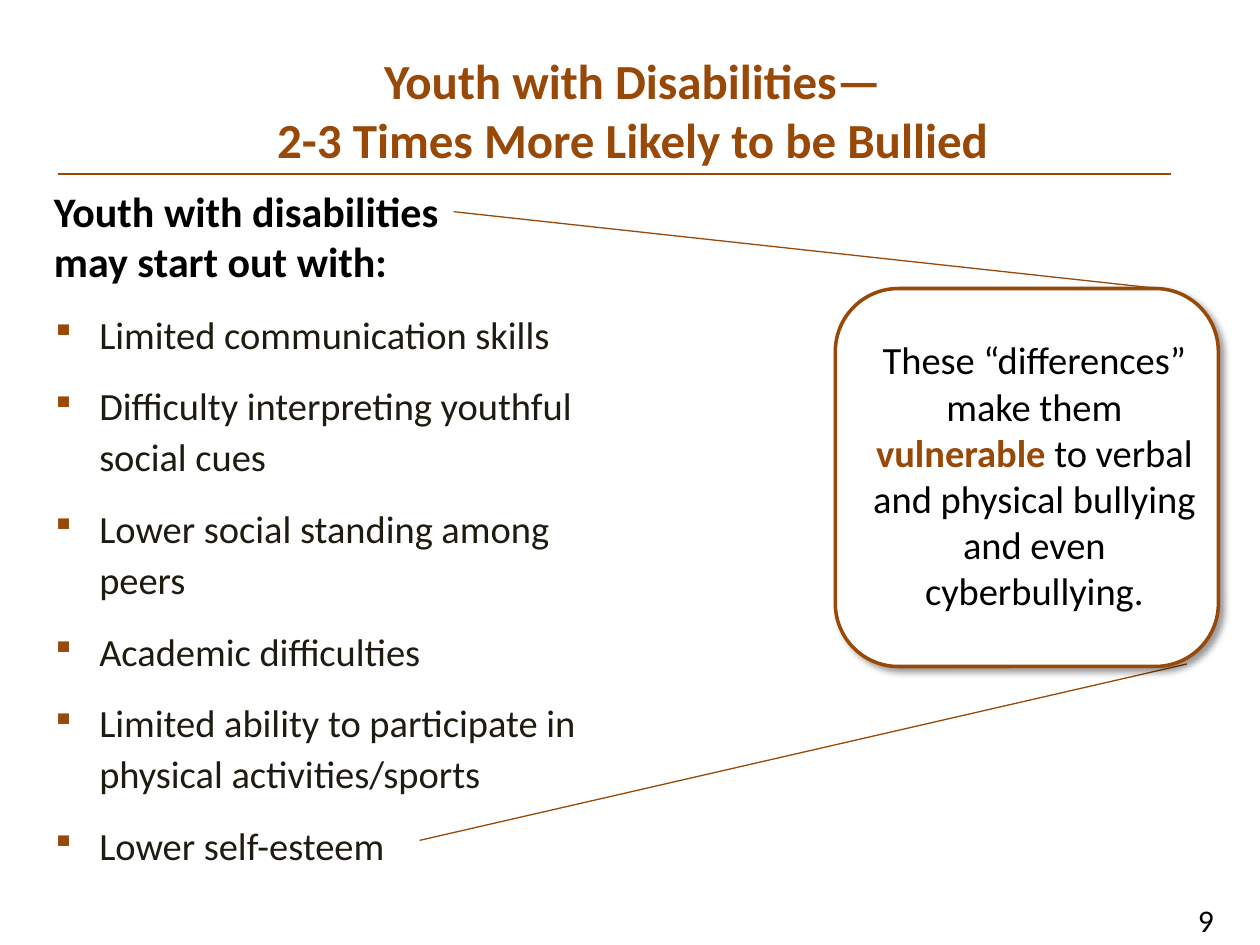
from dataclasses import dataclass

from lxml import etree
from pptx import Presentation
from pptx.dml.color import RGBColor
from pptx.enum.shapes import MSO_CONNECTOR, MSO_SHAPE
from pptx.enum.text import MSO_ANCHOR, PP_ALIGN
from pptx.oxml import parse_xml
from pptx.oxml.ns import nsdecls, qn
from pptx.util import Inches, Pt

LEFT, CENTER = PP_ALIGN.LEFT, PP_ALIGN.CENTER
TOP, MIDDLE = MSO_ANCHOR.TOP, MSO_ANCHOR.MIDDLE
ROUND = MSO_SHAPE.ROUNDED_RECTANGLE
STRAIGHT = MSO_CONNECTOR.STRAIGHT


@dataclass(frozen=True)
class Theme:
    font: str = "Calibri"
    brown: str = "984807"
    black: str = "000000"
    dark: str = "1E1C11"
    white: str = "FFFFFF"
    title: int = 28
    lead: int = 24
    body: int = 22
    number: int = 18


class Deck:
    def __init__(self, theme):
        self.theme = theme
        self.file = Presentation()
        self.file.slide_width = Inches(10)
        self.file.slide_height = Inches(7.5)
        self.slide = self.file.slides.add_slide(self.file.slide_layouts[6])

    def run(self, para, text, size, color, bold=False):
        run = para.add_run()
        run.text = text
        run.font.name = self.theme.font
        run.font.size = Pt(size)
        run.font.bold = bold
        run.font.color.rgb = RGBColor.from_string(color)

    def box(self, at, align=LEFT, anchor=TOP):
        frame = self.slide.shapes.add_textbox(*map(Inches, at)).text_frame
        frame.word_wrap = True
        frame.vertical_anchor = anchor
        frame.paragraphs[0].alignment = align
        return frame

    def text(self, at, runs, size, align=LEFT):
        para = self.box(at, align).paragraphs[0]
        for words, color, bold in runs:
            self.run(para, words, size, color, bold)

    def title(self, at, lines):
        para = self.box(at, CENTER, MIDDLE).paragraphs[0]
        for i, line in enumerate(lines):
            if i:
                para.add_line_break()
            self.run(para, line, self.theme.title, self.theme.brown, True)

    def bullet(self, para):
        props = para._p.get_or_add_pPr()
        props.set("marL", str(Inches(0.38)))
        props.set("indent", str(Inches(-0.38)))
        color = etree.SubElement(props, qn("a:buClr"))
        etree.SubElement(color, qn("a:srgbClr"), val=self.theme.brown)
        etree.SubElement(props, qn("a:buSzPct"), val="85000")
        etree.SubElement(props, qn("a:buChar"), char="▪")

    def bullets(self, at, items):
        frame = self.box(at)
        for i, item in enumerate(items):
            para = frame.add_paragraph() if i else frame.paragraphs[0]
            self.bullet(para)
            para.line_spacing = 1.1
            para.space_before = Pt(12 if i else 0)
            self.run(para, item, self.theme.body, self.theme.dark)

    def line(self, start, end, width):
        ends = map(Inches, (*start, *end))
        line = self.slide.shapes.add_connector(STRAIGHT, *ends)
        line.line.color.rgb = RGBColor.from_string(self.theme.brown)
        line.line.width = Pt(width)
        etree.SubElement(line._element.spPr, qn("a:effectLst"))

    def card(self, at):
        card = self.slide.shapes.add_shape(ROUND, *map(Inches, at))
        card.fill.solid()
        card.fill.fore_color.rgb = RGBColor.from_string(self.theme.white)
        card.line.color.rgb = RGBColor.from_string(self.theme.brown)
        card.line.width = Pt(2)
        card._element.spPr.append(parse_xml(
            f'<a:effectLst {nsdecls("a")}>'
            f'<a:outerShdw blurRad="{Pt(4)}" dist="{Pt(3)}" dir="2700000" '
            f'algn="tl" rotWithShape="0"><a:srgbClr val="{self.theme.black}">'
            '<a:alpha val="40000"/></a:srgbClr></a:outerShdw></a:effectLst>'))


def main():
    theme = Theme()
    deck = Deck(theme)
    deck.line((0.46, 1.38), (9.29, 1.38), 1.5)
    deck.bullets((0.31, 2.38, 4.6, 4.42), [
        "Limited communication skills",
        "Difficulty interpreting youthful social cues",
        "Lower social standing among peers",
        "Academic difficulties",
        "Limited ability to participate in physical activities/sports",
        "Lower self-esteem",
    ])
    deck.title((1.19, 0.42, 7.66, 0.89), [
        "Youth with Disabilities—",
        "2-3 Times More Likely to be Bullied",
    ])
    deck.text((0.33, 1.42, 3.75, 0.91), [
        ("Youth with disabilities may start out with:", theme.black, True),
    ], theme.lead)
    deck.line((3.33, 6.67), (9.42, 5.27), 0.75)
    deck.line((3.6, 1.68), (9.29, 2.3), 0.75)
    deck.card((6.63, 2.29, 3.04, 3))
    deck.text((6.78, 2.62, 2.86, 2.32), [
        ("These “differences” make them ", theme.black, False),
        ("vulnerable", theme.brown, True),
        (" to verbal and physical bullying and even cyberbullying.",
         theme.black, False),
    ], theme.body, CENTER)
    deck.text((9.14, 7.1, 0.86, 0.4), [("9", theme.black, False)],
              theme.number, CENTER)
    deck.file.save("out.pptx")


if __name__ == "__main__":
    main()
